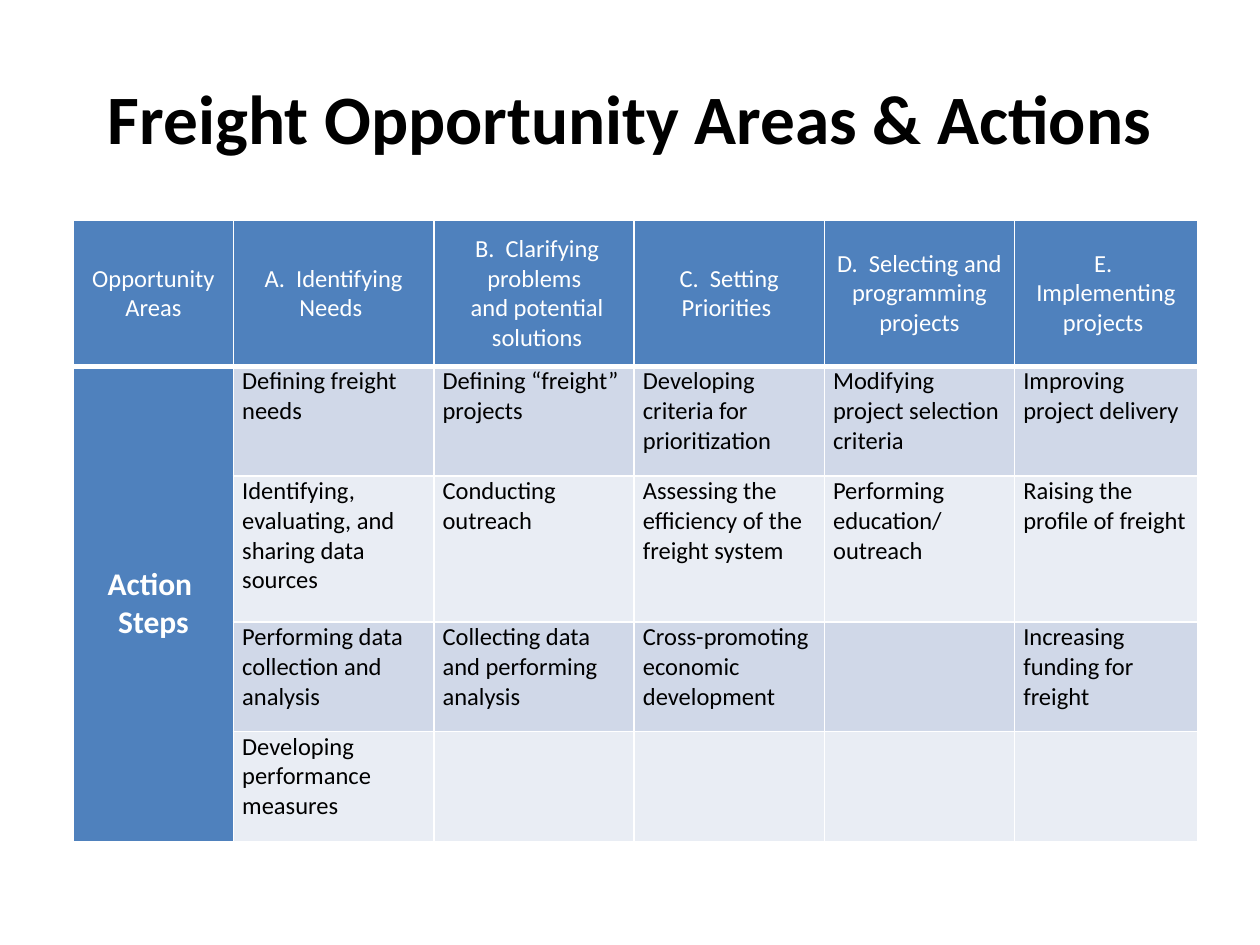
from dataclasses import dataclass

from lxml.etree import SubElement
from pptx import Presentation
from pptx.dml.color import RGBColor
from pptx.enum.text import MSO_ANCHOR, PP_ALIGN
from pptx.oxml.ns import qn
from pptx.util import Pt

BLUE, WHITE, BLACK = "4F81BD", "FFFFFF", "000000"
BANDS = ("D0D8E8", "E9EDF4")
COLUMN_WIDTHS = (91.4, 114.5, 114.5, 108.7, 108.7, 104.4)
ROW_HEIGHTS = (83.5, 62.6, 83.5, 62.6, 62.6)


@dataclass
class OpportunityArea:
    heading: str
    actions: tuple[str, ...]
    indent: float = 0


AREAS = (
    OpportunityArea("A.  Identifying Needs ", (
        "Defining freight needs",
        "Identifying, evaluating, and sharing data sources",
        "Performing data collection and analysis",
        "Developing performance measures")),
    OpportunityArea("B.  Clarifying problems \nand potential solutions", (
        "Defining “freight” projects",
        "Conducting outreach",
        "Collecting data and performing analysis"), indent=3.6),
    OpportunityArea("C.  Setting Priorities ", (
        "Developing criteria for prioritization",
        "Assessing the efficiency of the freight system",
        "Cross-promoting economic development")),
    OpportunityArea("D.  Selecting and programming projects", (
        "Modifying project selection criteria",
        "Performing education/ outreach")),
    OpportunityArea("E.  Implementing projects ", (
        "Improving project delivery",
        "Raising the profile of freight",
        "Increasing funding for freight")),
)


def rgb(value: str) -> RGBColor:
    return RGBColor.from_string(value)


def write(frame, text: str, *, size: float = 14, color: str = BLACK,
          bold: bool = False, align=PP_ALIGN.LEFT, indent: float = 0) -> None:
    frame.text = text
    for paragraph in frame.paragraphs:
        paragraph.alignment = align
        if indent:
            paragraph._p.get_or_add_pPr().set("marL", str(Pt(indent)))
        for run in paragraph.runs:
            font = run.font
            font.name, font.size, font.bold = "Calibri", Pt(size), bold
            font.color.rgb = rgb(color)


def style_cell(cell, fill: str, anchor=MSO_ANCHOR.TOP, bottom: float = 1) -> None:
    cell.margin_left = cell.margin_right = Pt(5)
    cell.margin_top = cell.margin_bottom = Pt(0)
    cell.vertical_anchor = anchor
    properties = cell._tc.get_or_add_tcPr()
    for side, width in (("L", 1), ("R", 1), ("T", 1), ("B", bottom)):
        border = SubElement(properties, qn(f"a:ln{side}"), w=str(Pt(width)))
        SubElement(SubElement(border, qn("a:solidFill")), qn("a:srgbClr"), val=WHITE)
    cell.fill.solid()
    cell.fill.fore_color.rgb = rgb(fill)


def add_heading(cell, text: str, bottom: float = 1, **text_format) -> None:
    style_cell(cell, BLUE, MSO_ANCHOR.MIDDLE, bottom)
    write(cell.text_frame, text, color=WHITE, align=PP_ALIGN.CENTER, **text_format)


def add_area(table, column: int, area: OpportunityArea) -> None:
    add_heading(table.cell(0, column), area.heading, bottom=3, indent=area.indent)
    for row in range(1, len(ROW_HEIGHTS)):
        cell = table.cell(row, column)
        style_cell(cell, BANDS[(row - 1) % 2])
        if row <= len(area.actions):
            action = area.actions[row - 1]
            justified = action.startswith("Performing education")
            write(cell.text_frame, action,
                  align=PP_ALIGN.JUSTIFY if justified else PP_ALIGN.LEFT)


def main() -> None:
    presentation = Presentation()
    presentation.slide_width, presentation.slide_height = Pt(720), Pt(540)
    slide = presentation.slides.add_slide(presentation.slide_layouts[6])

    # Title
    title = slide.shapes.add_textbox(Pt(36), Pt(21.6), Pt(648), Pt(90)).text_frame
    title.word_wrap = True
    title.vertical_anchor = MSO_ANCHOR.MIDDLE
    write(title, "Freight Opportunity Areas & Actions", size=39.6, bold=True,
          align=PP_ALIGN.CENTER)

    # Table grid
    table = slide.shapes.add_table(
        len(ROW_HEIGHTS), len(COLUMN_WIDTHS), Pt(42), Pt(126),
        Pt(sum(COLUMN_WIDTHS)), Pt(sum(ROW_HEIGHTS))).table
    for column, width in zip(table.columns, COLUMN_WIDTHS):
        column.width = Pt(width)
    for row, height in zip(table.rows, ROW_HEIGHTS):
        row.height = Pt(height)

    # Row headings
    add_heading(table.cell(0, 0), "Opportunity Areas", bottom=3)
    action_steps = table.cell(1, 0)
    action_steps.merge(table.cell(len(ROW_HEIGHTS) - 1, 0))
    add_heading(action_steps, "Action \nSteps", size=18, bold=True)

    # Opportunity areas with their actions
    for column, area in enumerate(AREAS, start=1):
        add_area(table, column, area)

    presentation.save("out.pptx")


if __name__ == "__main__":
    main()
